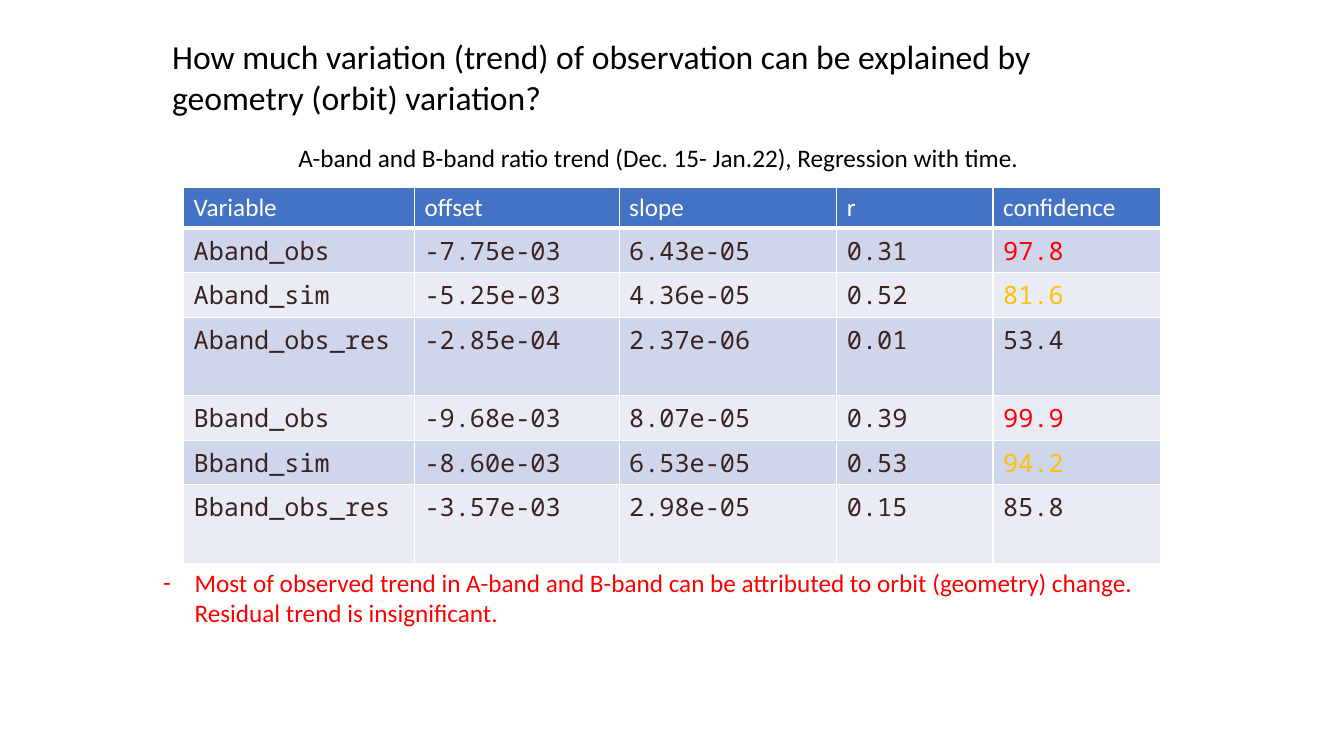
from lxml.etree import SubElement as add_element
from pptx import Presentation
from pptx.dml.color import RGBColor
from pptx.enum.text import MSO_ANCHOR as Anchor
from pptx.oxml.ns import qn
from pptx.util import Pt

BLACK = RGBColor(0x00, 0x00, 0x00)
WHITE = RGBColor(0xFF, 0xFF, 0xFF)
BLUE = RGBColor(0x44, 0x72, 0xC4)
BANDS = (RGBColor(0xCF, 0xD5, 0xEA), RGBColor(0xE9, 0xEB, 0xF5))
BROWN = RGBColor(0x3B, 0x23, 0x22)
RED = RGBColor(0xFF, 0x00, 0x00)
AMBER = RGBColor(0xFF, 0xC0, 0x00)

HEADINGS = ("Variable", "offset", "slope", "r", "confidence")
TRENDS = (
    ("Aband_obs", "-7.75e-03", "6.43e-05", "0.31", "97.8"),
    ("Aband_sim", "-5.25e-03", "4.36e-05", "0.52", "81.6"),
    ("Aband_obs_res", "-2.85e-04", "2.37e-06", "0.01", "53.4"),
    ("Bband_obs", "-9.68e-03", "8.07e-05", "0.39", "99.9"),
    ("Bband_sim", "-8.60e-03", "6.53e-05", "0.53", "94.2"),
    ("Bband_obs_res", "-3.57e-03", "2.98e-05", "0.15", "85.8"),
)
CONFIDENCE_COLORS = {"obs": RED, "sim": AMBER, "res": BROWN}
COLUMN_WIDTHS = (164.9, 146.2, 155.5, 111.6, 119.5)
HEADER_HEIGHT, ROW_HEIGHT, RESIDUAL_HEIGHT = 29.2, 31.8, 56.2


def write(frame, text, color, size=18, font="Calibri"):
    """Write one formatted paragraph in a text frame and return it."""
    para = frame.paragraphs[0]
    span = para.add_run()
    span.text = text
    for name, value in {"name": font, "size": Pt(size)}.items():
        setattr(span.font, name, value)
    span.font.color.rgb = color
    return para


def add_text(page, bounds, text, color, size=18, anchor=Anchor.TOP):
    """Add a wrapping text box and return its paragraph."""
    box = page.shapes.add_textbox(*map(Pt, bounds))
    for name, value in {"word_wrap": True, "vertical_anchor": anchor}.items():
        setattr(box.text_frame, name, value)
    return write(box.text_frame, text, color, size)


def add_dash(para, indent):
    """Give a paragraph a hanging dash bullet."""
    properties = para._p.get_or_add_pPr()
    for name, value in {"marL": indent, "indent": -indent}.items():
        properties.set(name, str(Pt(value)))
    add_element(properties, qn("a:buFont"), typeface="Calibri")
    add_element(properties, qn("a:buChar"), char="-")


def set_borders(cell, bottom):
    """Draw white borders around a cell."""
    properties = cell._tc.get_or_add_tcPr()
    for side, width in {"L": 1, "R": 1, "T": 1, "B": bottom}.items():
        line = add_element(properties, qn(f"a:ln{side}"), w=str(Pt(width)))
        fill = add_element(line, qn("a:solidFill"))
        add_element(fill, qn("a:srgbClr"), val=str(WHITE))


def fill_cell(cell, text, color, background, font, bottom=1):
    """Fill, border and label a table cell."""
    set_borders(cell, bottom)
    cell.fill.solid()
    cell.fill.fore_color.rgb = background
    write(cell.text_frame, text, color, font=font)


def add_trend_table(page, left, top):
    """Add the banded table of regression results."""
    heights = [HEADER_HEIGHT] + [
        RESIDUAL_HEIGHT if trend[0].endswith("res") else ROW_HEIGHT for trend in TRENDS
    ]
    bounds = (left, top, sum(COLUMN_WIDTHS), sum(heights))
    table = page.shapes.add_table(len(heights), len(HEADINGS), *map(Pt, bounds)).table
    for column, width in zip(table.columns, COLUMN_WIDTHS):
        column.width = Pt(width)
    for row, height in zip(table.rows, heights):
        row.height = Pt(height)
    for cell, heading in zip(table.rows[0].cells, HEADINGS):
        fill_cell(cell, heading, WHITE, BLUE, "Calibri", bottom=3)
    for index, trend in enumerate(TRENDS):
        colors = [BROWN] * 4 + [CONFIDENCE_COLORS[trend[0][-3:]]]
        for cell, text, color in zip(table.rows[index + 1].cells, trend, colors):
            fill_cell(cell, text, color, BANDS[index % 2], "Noto Sans Mono")


def main():
    """Build the slide and save the deck."""
    deck = Presentation()
    for name, value in {"slide_width": Pt(960), "slide_height": Pt(540)}.items():
        setattr(deck, name, value)
    page = deck.slides.add_slide(deck.slide_layouts[6])
    caption = add_text(
        page, (206, 84.2, 572.4, 59),
        "A-band and B-band ratio trend (Dec. 15- Jan.22), Regression with time.",
        BLACK, anchor=Anchor.MIDDLE,
    )
    caption.line_spacing = 0.9
    add_trend_table(page, 131.2, 133.8)
    add_text(
        page, (115.9, 22.3, 719.3, 65.4),
        "How much variation (trend) of observation can be explained by "
        "geometry (orbit) variation?",
        BLACK, size=24,
    )
    finding = add_text(
        page, (109.4, 401.8, 709.2, 72.7),
        "Most of observed trend in A-band and B-band can be attributed to "
        "orbit (geometry) change. Residual trend is insignificant.",
        RED,
    )
    add_dash(finding, 22.5)
    deck.save("out.pptx")


if __name__ == "__main__":
    main()
